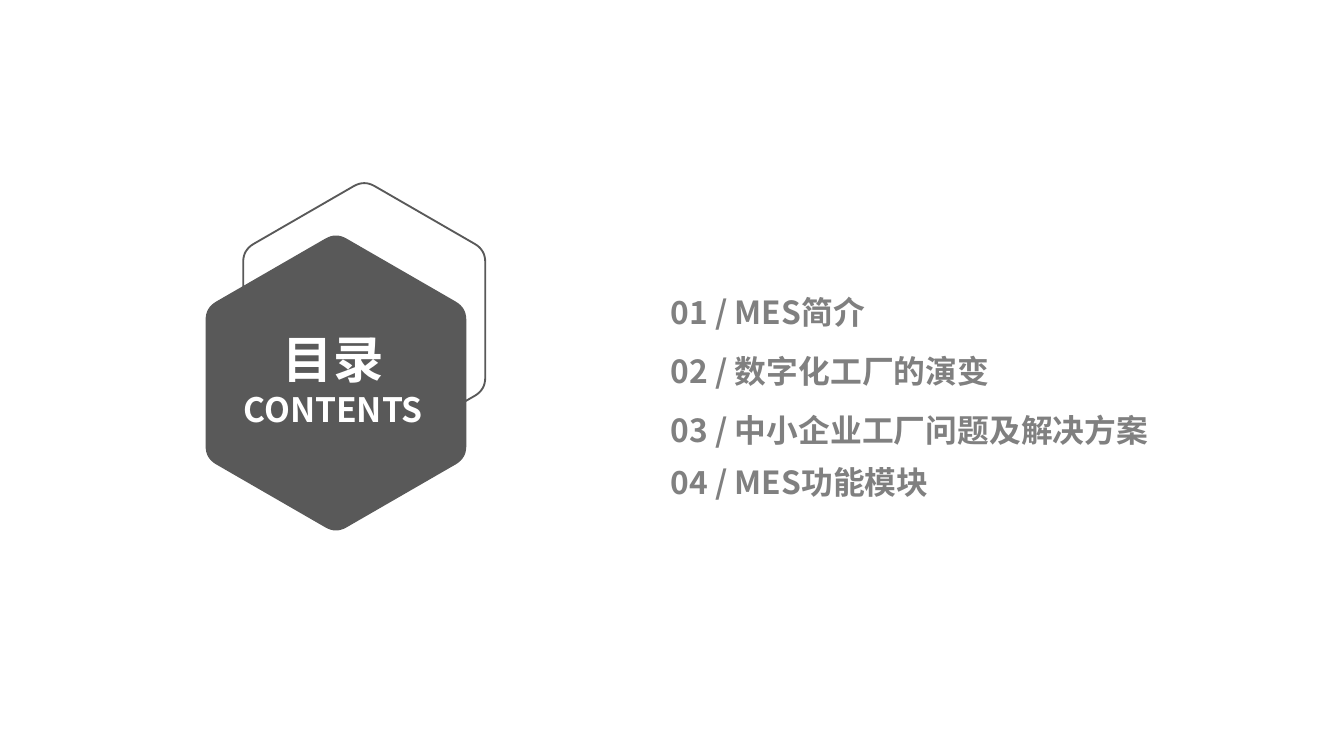
from math import cos, radians, sin

from lxml import etree
from pptx import Presentation
from pptx.dml.color import RGBColor
from pptx.enum.text import MSO_ANCHOR, MSO_AUTO_SIZE, PP_ALIGN
from pptx.oxml.ns import qn
from pptx.util import Inches, Pt

COLORS = {"hexagon": "595959", "item": "808080", "title": "FFFFFF"}
FONT = "Noto Sans CJK SC"


def add_rounded_hexagon(center_x, center_y, radius, cut):
    corners = [(center_x + radius * cos(radians(angle)), center_y + radius * sin(radians(angle)))
               for angle in range(-90, 270, 60)]
    points = []
    for index, (x, y) in enumerate(corners):
        start, end = [(x + (nx - x) * cut / radius, y + (ny - y) * cut / radius)
                      for nx, ny in (corners[index - 1], corners[(index + 1) % 6])]
        for step in range(9):
            t = step / 8
            points.append(tuple(Inches((1 - t) ** 2 * a + 2 * t * (1 - t) * b + t ** 2 * c)
                                for a, b, c in zip(start, (x, y), end)))
    builder = slide.shapes.build_freeform(*points[0])
    builder.add_line_segments(points[1:], close=True)
    shape = builder.convert_to_shape()
    shape.shadow.inherit = False
    return shape


def write_text(shape, lines, color, alignment):
    frame = shape.text_frame
    frame_format = {
        "word_wrap": True, "auto_size": MSO_AUTO_SIZE.NONE, "vertical_anchor": MSO_ANCHOR.TOP,
        "margin_left": Inches(0.07), "margin_right": Inches(0.07),
        "margin_top": Inches(0.04), "margin_bottom": Inches(0.04),
    }
    for name, value in frame_format.items():
        setattr(frame, name, value)
    for index, (text, size) in enumerate(lines):
        paragraph = frame.add_paragraph() if index else frame.paragraphs[0]
        paragraph.alignment = alignment
        run = paragraph.add_run()
        run.text = text
        for name, value in {"name": FONT, "size": Pt(size), "bold": True}.items():
            setattr(run.font, name, value)
        run.font.color.rgb = RGBColor.from_string(COLORS[color])
        etree.SubElement(run.font._element, qn("a:ea")).set("typeface", FONT)


presentation = Presentation()
presentation.slide_width = Inches(10)
presentation.slide_height = Inches(10) * 9 // 16
slide = presentation.slides.add_slide(presentation.slide_layouts[5])

outline_hexagon = add_rounded_hexagon(2.71, 2.38, 1.04, 0.09)
outline_hexagon.fill.background()
outline_hexagon.line.color.rgb = RGBColor.from_string(COLORS["hexagon"])
outline_hexagon.line.width = Pt(1)

solid_hexagon = add_rounded_hexagon(2.5, 2.85, 1.12, 0.09)
solid_hexagon.fill.solid()
solid_hexagon.fill.fore_color.rgb = RGBColor.from_string(COLORS["hexagon"])
solid_hexagon.line.fill.background()

contents = [
    ("01 / MES简介", 2.14, 3.26, 0.65),
    ("02 / 数字化工厂的演变", 2.58, 2.68, 0.36),
    ("03 / 中小企业工厂问题及解决方案", 3.02, 4.25, 0.36),
    ("04 / MES功能模块", 3.4, 2.83, 0.36),
]
for text, top, width, height in contents:
    item = slide.shapes.add_textbox(Inches(4.92), Inches(top), Inches(width), Inches(height))
    write_text(item, [(text, 17)], "item", PP_ALIGN.LEFT)

title = slide.shapes.title
title_place = {"left": 1.57, "top": 2.4, "width": 1.82, "height": 0.83}
for name, value in title_place.items():
    setattr(title, name, Inches(value))
write_text(title, [("目录", 27), ("CONTENTS", 18)], "title", PP_ALIGN.CENTER)
slide.shapes.element.append(title.element)

presentation.save("out.pptx")
